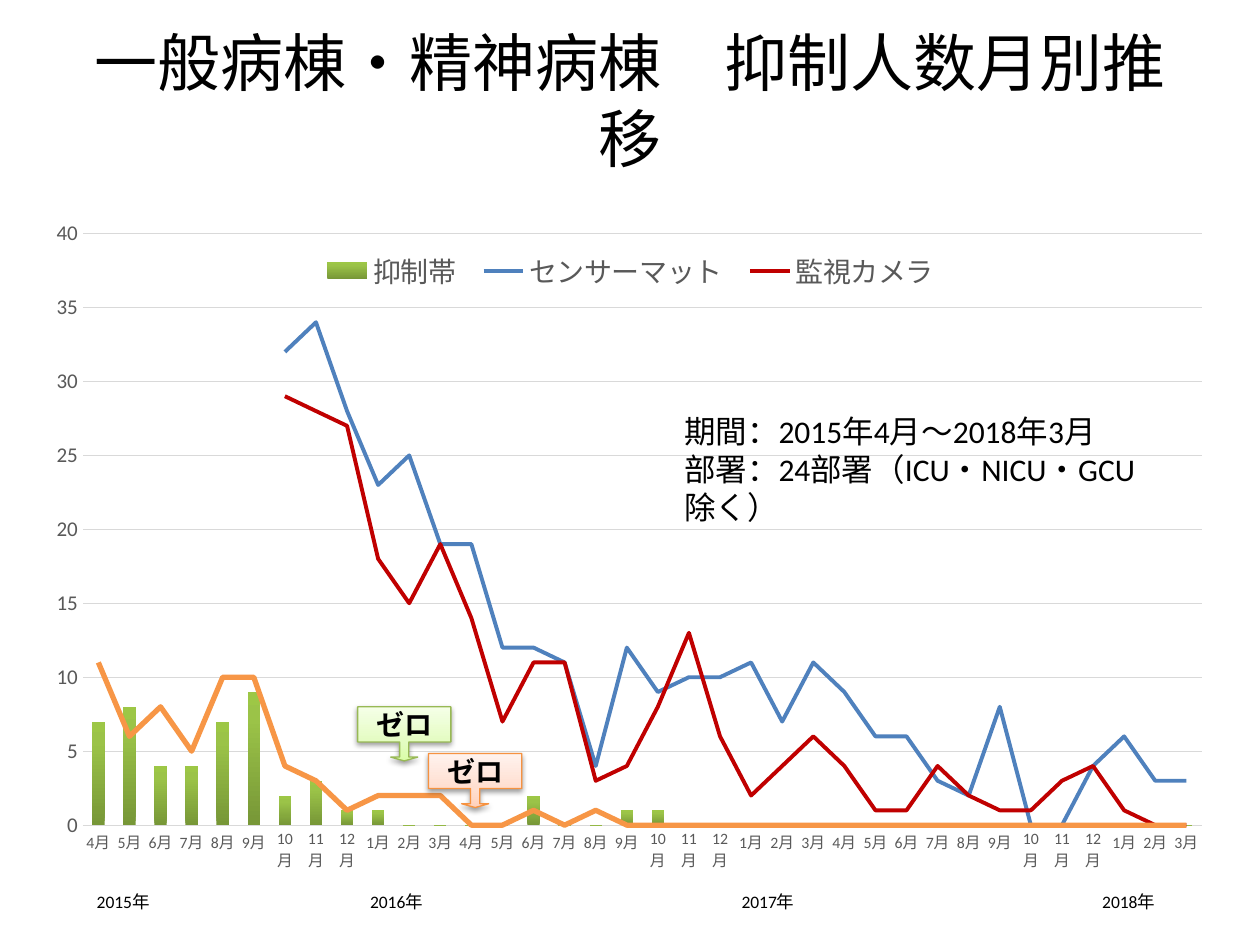
from copy import deepcopy

from lxml import etree
from pptx import Presentation
from pptx import util as u
from pptx.chart.data import CategoryChartData
from pptx.dml.color import RGBColor
from pptx.enum import chart as kinds, shapes, text
from pptx.oxml import parse_xml
from pptx.oxml.ns import nsdecls, qn

FONT = "Calibri"
COLORS = {
    "ink": "000000", "label": "595959", "grid": "D9D9D9",
    "sensor": "4F81BD", "camera": "C00000", "mitten": "F79646",
    "green_line": "98B955", "orange_line": "F69240",
}
GRADIENTS = {
    "belt": [(0, "779737"), (80, "9BC348"), (100, "9DC746")],
    "green": [(0, "DAFDA7"), (35, "E4FCC2"), (100, "F5FFE7")],
    "orange": [(0, "FFD2BD"), (35, "FFDED0"), (100, "FFF2ED")],
}
MONTHS = [f"{(month + 3) % 12 + 1}月" for month in range(36)]
GAP = [0] + [None] * 5
SERIES = {
    "抑制帯": [7, 8, 4, 4, 7, 9, 2, 3, 1, 1, 0, 0, 0, 0, 2, 0, 0, 1, 1] + [0] * 17,
    "センサーマット": GAP + [32, 34, 28, 23, 25, 19, 19, 12, 12, 11, 4, 12, 9, 10, 10,
                      11, 7, 11, 9, 6, 6, 3, 2, 8, 0, 0, 4, 6, 3, 3],
    "監視カメラ": GAP + [29, 28, 27, 18, 15, 19, 14, 7, 11, 11, 3, 4, 8, 13, 6,
                    2, 4, 6, 4, 1, 1, 4, 2, 1, 1, 3, 4, 1, 0, 0],
    "ミトン": [11, 6, 8, 5, 10, 10, 4, 3, 1, 2, 2, 2, 0, 0, 1, 0, 1] + [0] * 19,
}
LINES = [("sensor", 2.25), ("camera", 2.25), ("mitten", 3)]
YEARS = {2015: 0, 2016: 5.51, 2017: 13, 2018: 20.27}


def rgb(name):
    return RGBColor.from_string(COLORS[name])


def cm(box):
    return [u.Cm(length) for length in box]


def style_font(font, size, color="ink", bold=False):
    font.name, font.size, font.bold = FONT, u.Pt(size), bold
    font.color.rgb = rgb(color)


def write(para, words, size, bold=False):
    span = para.add_run()
    span.text = words
    style_font(span.font, size, bold=bold)


def paint_gradient(fill, holder, stops):
    """Fill upwards, from the first stop at the foot."""
    fill.gradient()
    fill.gradient_angle = 90
    stop_list = holder.find(".//" + qn("a:gsLst"))
    for stop in list(stop_list):
        stop_list.remove(stop)
    for position, color in stops:
        stop = etree.SubElement(stop_list, qn("a:gs"), pos=str(position * 1000))
        etree.SubElement(stop, qn("a:srgbClr"), val=color)


def add_title(page, box):
    title = page.shapes.title
    title.left, title.top, title.width, title.height = cm(box)
    title.text_frame.vertical_anchor = text.MSO_ANCHOR.MIDDLE
    para = title.text_frame.paragraphs[0]
    para.alignment = text.PP_ALIGN.CENTER
    write(para, "一般病棟・精神病棟\u3000抑制人数月別推移".replace("\u3000", "　"), 36)


def add_text_box(page, box, lines, size):
    frame = page.shapes.add_textbox(*cm(box)).text_frame
    frame.word_wrap = True
    frame.auto_size = text.MSO_AUTO_SIZE.SHAPE_TO_FIT_TEXT
    for index, words in enumerate(lines):
        para = frame.add_paragraph() if index else frame.paragraphs[0]
        write(para, words, size)


def move_to_line_chart(chart):
    """Turn every series but the first into a line on the same axes."""
    bars = chart.element.find(".//" + qn("c:barChart"))
    lines = parse_xml(f'<c:lineChart {nsdecls("c")}><c:grouping val="standard"/>'
                      '<c:varyColors val="0"/></c:lineChart>')
    for series in bars.findall(qn("c:ser"))[1:]:
        for bar_only in series.findall(qn("c:invertIfNegative")):
            series.remove(bar_only)
        lines.append(series)
    etree.SubElement(lines, qn("c:marker"), val="1")
    for axis_id in bars.findall(qn("c:axId")):
        lines.append(deepcopy(axis_id))
    bars.addnext(lines)


def layout_xml(x, y, w, h, inner=False):
    target = '<c:layoutTarget val="inner"/>' if inner else ""
    return parse_xml(
        f'<c:layout {nsdecls("c")}><c:manualLayout>{target}'
        '<c:xMode val="edge"/><c:yMode val="edge"/>'
        f'<c:x val="{x}"/><c:y val="{y}"/><c:w val="{w}"/><c:h val="{h}"/>'
        '</c:manualLayout></c:layout>')


def place(parent, layout, before):
    for old in parent.findall(qn("c:layout")):
        parent.remove(old)
    parent.find(qn(before)).addprevious(layout)


def add_trend_chart(page, box):
    data = CategoryChartData()
    data.categories = MONTHS
    for name, values in SERIES.items():
        data.add_series(name, values)
    chart = page.shapes.add_chart(
        kinds.XL_CHART_TYPE.COLUMN_CLUSTERED, *cm(box), data).chart
    chart.has_title = False
    style_font(chart.font, 10)
    move_to_line_chart(chart)

    # Columns and lines
    bars, lines = chart.plots
    bars.gap_width = 150
    bars.vary_by_categories = False
    paint_gradient(bars.series[0].format.fill,
                   chart.element.find(".//" + qn("c:barChart")), GRADIENTS["belt"])
    for series, (color, width) in zip(lines.series, LINES):
        series.smooth = False
        series.marker.style = kinds.XL_MARKER_STYLE.NONE
        series.format.line.color.rgb = rgb(color)
        series.format.line.width = u.Pt(width)

    # Axes
    months, counts = chart.category_axis, chart.value_axis
    for axis, size in ((months, 9), (counts, 12)):
        axis.major_tick_mark = axis.minor_tick_mark = kinds.XL_TICK_MARK.NONE
        style_font(axis.tick_labels.font, size, "label")
    counts.minimum_scale, counts.maximum_scale, counts.major_unit = 0, 40, 5
    counts.format.line.fill.background()
    for line in (months.format.line, counts.major_gridlines.format.line):
        line.color.rgb = rgb("grid")
        line.width = u.Pt(0.75)

    # Legend inside the plot, without the last series
    chart.has_legend = True
    legend = chart.legend
    legend.position = kinds.XL_LEGEND_POSITION.TOP
    legend.include_in_layout = False
    style_font(legend.font, 16, "label")
    legend_xml = chart.element.find(".//" + qn("c:legend"))
    place(legend_xml, layout_xml(0.23, 0.14, 0.54, 0.06), "c:overlay")
    legend_xml.find(qn("c:legendPos")).addnext(parse_xml(
        f'<c:legendEntry {nsdecls("c")}><c:idx val="3"/><c:delete val="1"/></c:legendEntry>'))
    place(chart.element.find(".//" + qn("c:plotArea")),
          layout_xml(0.04, 0.12, 0.94, 0.8, inner=True), "c:barChart")


def add_years(page, box):
    left, top, width, height = box
    for year, offset in YEARS.items():
        add_text_box(page, (left + offset, top, width, height), [f"{year}年"], 10)


def add_zero_callout(page, box, tone):
    callout = page.shapes.add_shape(shapes.MSO_SHAPE.DOWN_ARROW_CALLOUT, *cm(box))
    for index, value in enumerate((0.17, 0.25, 0.07, 0.65)):
        callout.adjustments[index] = value
    paint_gradient(callout.fill, callout.element, GRADIENTS[tone])
    callout.line.color.rgb = rgb(tone + "_line")
    callout.line.width = u.Pt(0.75)
    callout.shadow.inherit = False
    callout.element.spPr.find(qn("a:effectLst")).append(parse_xml(
        f'<a:outerShdw {nsdecls("a")} blurRad="{u.Pt(3.1)}" dist="{u.Pt(1.6)}" dir="5400000" '
        'rotWithShape="0"><a:srgbClr val="000000"><a:alpha val="38000"/></a:srgbClr>'
        '</a:outerShdw>'))
    frame = callout.text_frame
    frame.vertical_anchor = text.MSO_ANCHOR.MIDDLE
    para = frame.paragraphs[0]
    para.alignment = text.PP_ALIGN.CENTER
    write(para, "ゼロ", 16, bold=True)


def main():
    deck = Presentation()
    deck.slide_width, deck.slide_height = u.Cm(25.4), u.Cm(19.05)
    page = deck.slides.add_slide(deck.slide_layouts[5])
    add_title(page, (1.27, 0.76, 22.86, 2.49))
    add_trend_chart(page, (0.71, 2.92, 24, 14.91))
    add_years(page, (1.7, 17.83, 1.6, 0.69))
    add_text_box(page, (13.54, 8.18, 10.06, 1.8),
                 ["期間：2015年4月～2018年3月", "部署：24部署（ICU・NICU・GCU除く）"], 18)
    add_zero_callout(page, (7.21, 14.25, 1.88, 1.09), "green")
    add_zero_callout(page, (8.64, 15.19, 1.88, 1.09), "orange")
    deck.save("out.pptx")


if __name__ == "__main__":
    main()
